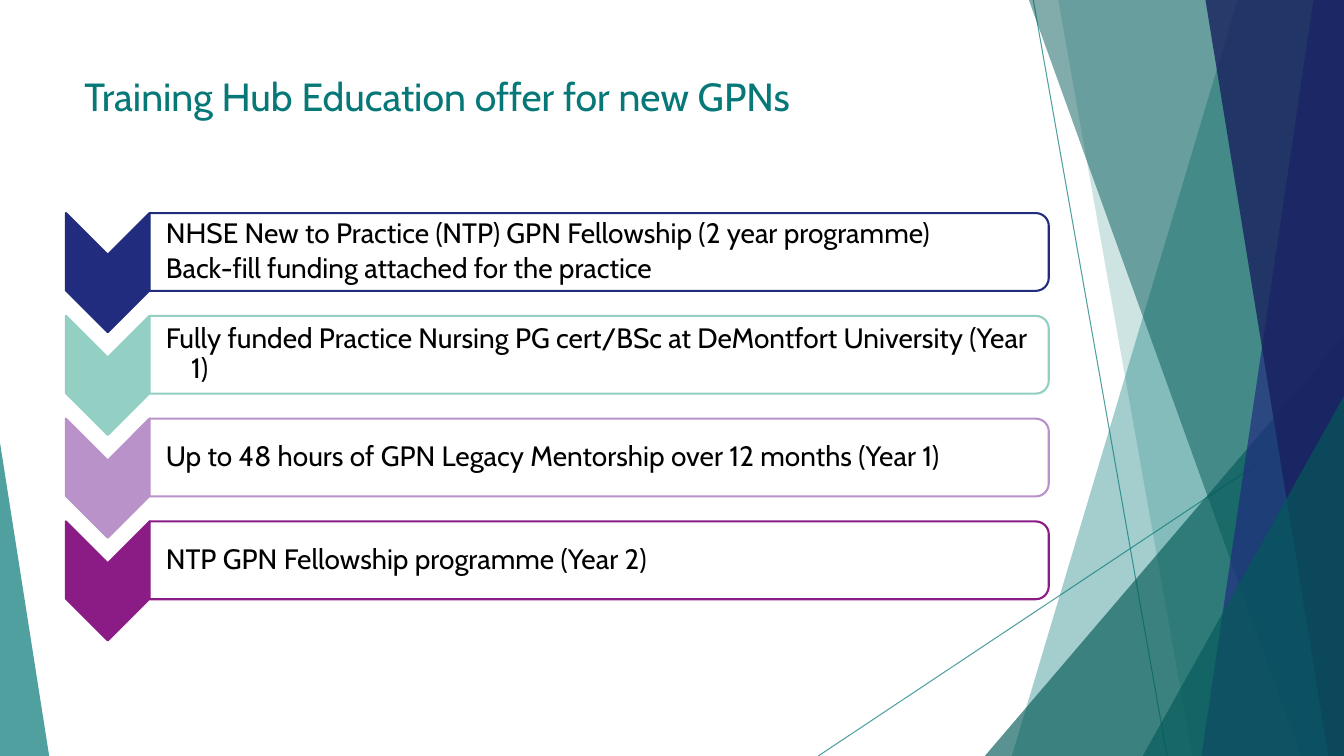
from dataclasses import dataclass
from lxml.etree import SubElement
from pptx import Presentation
from pptx.dml.color import RGBColor
from pptx.enum.shapes import MSO_CONNECTOR, MSO_SHAPE as SHAPE
from pptx.enum.text import MSO_ANCHOR
from pptx.oxml.ns import qn
from pptx.util import Cm, Pt


@dataclass(frozen=True)
class Theme:
    font: str = "Cabin"
    title_size: int = 28
    body_size: int = 20
    hairline: float = 0.75
    outline: float = 1.5
    teal: str = "057877"
    deep_teal: str = "045A59"
    navy: str = "212C7E"
    midnight: str = "19215E"
    mint: str = "93CFC3"
    lilac: str = "BA92CA"
    purple: str = "8B1C86"
    white: str = "FFFFFF"
    black: str = "000000"


@dataclass(frozen=True)
class Box:
    x: float
    y: float
    w: float
    h: float


T = Theme()
SLIDE = Box(0, 0, 33.87, 19.05)
TITLE = Box(1.88, 1.7, 23.88, 3.66)
OFFERS = Box(1.66, 5.37, 24.77, 10.77)
ROW_PITCH = 2.59
ROWS = [
    (T.navy, ["NHSE New to Practice (NTP) GPN Fellowship (2 year programme)",
              "Back-fill funding attached for the practice"]),
    (T.mint, ["Fully funded Practice Nursing PG cert/BSc at DeMontfort University (Year 1)"]),
    (T.lilac, ["Up to 48 hours of GPN Legacy Mentorship over 12 months (Year 1)"]),
    (T.purple, ["NTP GPN Fellowship programme (Year 2)"]),
]


def set_alpha(sp, percent):
    color = next(sp._element.spPr.iter(qn("a:srgbClr")))
    SubElement(color, qn("a:alpha")).set("val", str(percent * 1000))


def paint(sp, fill, alpha=100, line=None):
    sp.shadow.inherit = False
    sp.fill.solid()
    sp.fill.fore_color.rgb = RGBColor.from_string(fill)
    if alpha < 100:
        set_alpha(sp, alpha)
    if line:
        sp.line.color.rgb = RGBColor.from_string(line)
        sp.line.width = Pt(T.outline)
    else:
        sp.line.fill.background()


def add_ray(s, x1, y1, x2, y2):
    ray = s.shapes.add_connector(MSO_CONNECTOR.STRAIGHT, Cm(x1), Cm(y1), Cm(x2), Cm(y2))
    ray.line.color.rgb = RGBColor.from_string(T.teal)
    ray.line.width = Pt(T.hairline)
    set_alpha(ray, 70)
    SubElement(ray._element.spPr, qn("a:effectLst"))


def add_facet(s, box, top_x, bottom_x, color, alpha):
    right, bottom = box.x + box.w, box.y + box.h
    fb = s.shapes.build_freeform(Cm(box.x + top_x), Cm(box.y))
    fb.add_line_segments([(Cm(right), Cm(box.y)), (Cm(right), Cm(bottom)),
                          (Cm(box.x + bottom_x), Cm(bottom))], close=True)
    paint(fb.convert_to_shape(), color, alpha)


def add_corner(s, box, left, top, width, apex, color, alpha):
    sp = s.shapes.add_shape(SHAPE.ISOSCELES_TRIANGLE, Cm(box.x + left), Cm(box.y + top),
                            Cm(width), Cm(box.h - top))
    sp.adjustments[0] = apex
    paint(sp, color, alpha)


def add_backdrop(s, box):
    right, bottom = box.x + box.w, box.y + box.h
    add_ray(s, box.x + 26.04, box.y, box.x + 29.41, bottom)
    add_ray(s, right, box.y + 10.24, box.x + 20.62, bottom)
    add_facet(s, box, 31.19, 25.5, T.teal, 36)
    add_facet(s, box, 26.67, 30.05, T.teal, 20)
    add_corner(s, box, 24.82, 8.46, box.w - 24.82, 1, T.deep_teal, 66)
    add_facet(s, box, 25.93, 32.79, T.deep_teal, 50)
    add_facet(s, box, 33.1, 30.28, T.navy, 70)
    add_facet(s, box, 30.38, 33.48, T.midnight, 80)
    add_corner(s, box, 28.8, 9.98, box.w - 28.8, 1, T.deep_teal, 66)
    add_corner(s, box, 0, 11.15, 1.24, 0, T.teal, 70)


def add_text(s, box, lines, size, color):
    tb = s.shapes.add_textbox(Cm(box.x), Cm(box.y), Cm(box.w), Cm(box.h))
    tf = tb.text_frame
    tf.word_wrap = True
    tf.text = "\n".join(lines)
    for p in tf.paragraphs:
        p.font.name = T.font
        p.font.size = Pt(size)
        p.font.color.rgb = RGBColor.from_string(color)
    return tf


def add_turned(s, kind, box):
    sp = s.shapes.add_shape(kind, Cm(box.x + (box.w - box.h) / 2),
                            Cm(box.y + (box.h - box.w) / 2), Cm(box.h), Cm(box.w))
    sp.rotation = 90
    return sp


def add_offer(s, box, color, lines):
    chevron_w, bar_h, pad = 2.11, 1.96, 0.1
    chevron = add_turned(s, SHAPE.CHEVRON, Box(box.x, box.y, chevron_w, box.h))
    paint(chevron, color, line=color)
    bar = Box(box.x + chevron_w, box.y, box.w - chevron_w, bar_h)
    paint(add_turned(s, SHAPE.ROUND_2_SAME_RECTANGLE, bar), T.white, 90, color)
    tf = add_text(s, Box(bar.x, bar.y + pad, bar.w - pad, bar.h - 2 * pad),
                  lines, T.body_size, T.black)
    tf.vertical_anchor = MSO_ANCHOR.MIDDLE
    tf.margin_left = Cm(0.41)
    tf.margin_top = tf.margin_right = tf.margin_bottom = Cm(0.03)
    for p in tf.paragraphs:
        p.line_spacing = 0.9
        p.space_after = Pt(3.5)
        pPr = p._p.get_or_add_pPr()
        pPr.set("marL", str(Cm(0.64)))
        pPr.set("indent", str(-Cm(0.64)))


def add_offers(s, box):
    row_h = box.h - ROW_PITCH * (len(ROWS) - 1)
    for i, (color, lines) in enumerate(ROWS):
        add_offer(s, Box(box.x, box.y + i * ROW_PITCH, box.w, row_h), color, lines)


def main():
    prs = Presentation()
    prs.slide_width, prs.slide_height = Cm(SLIDE.w), Cm(SLIDE.h)
    s = prs.slides.add_slide(prs.slide_layouts[6])
    add_backdrop(s, SLIDE)
    add_text(s, TITLE, ["Training Hub Education offer for new GPNs"], T.title_size, T.teal)
    add_offers(s, OFFERS)
    prs.save("out.pptx")


if __name__ == "__main__":
    main()
